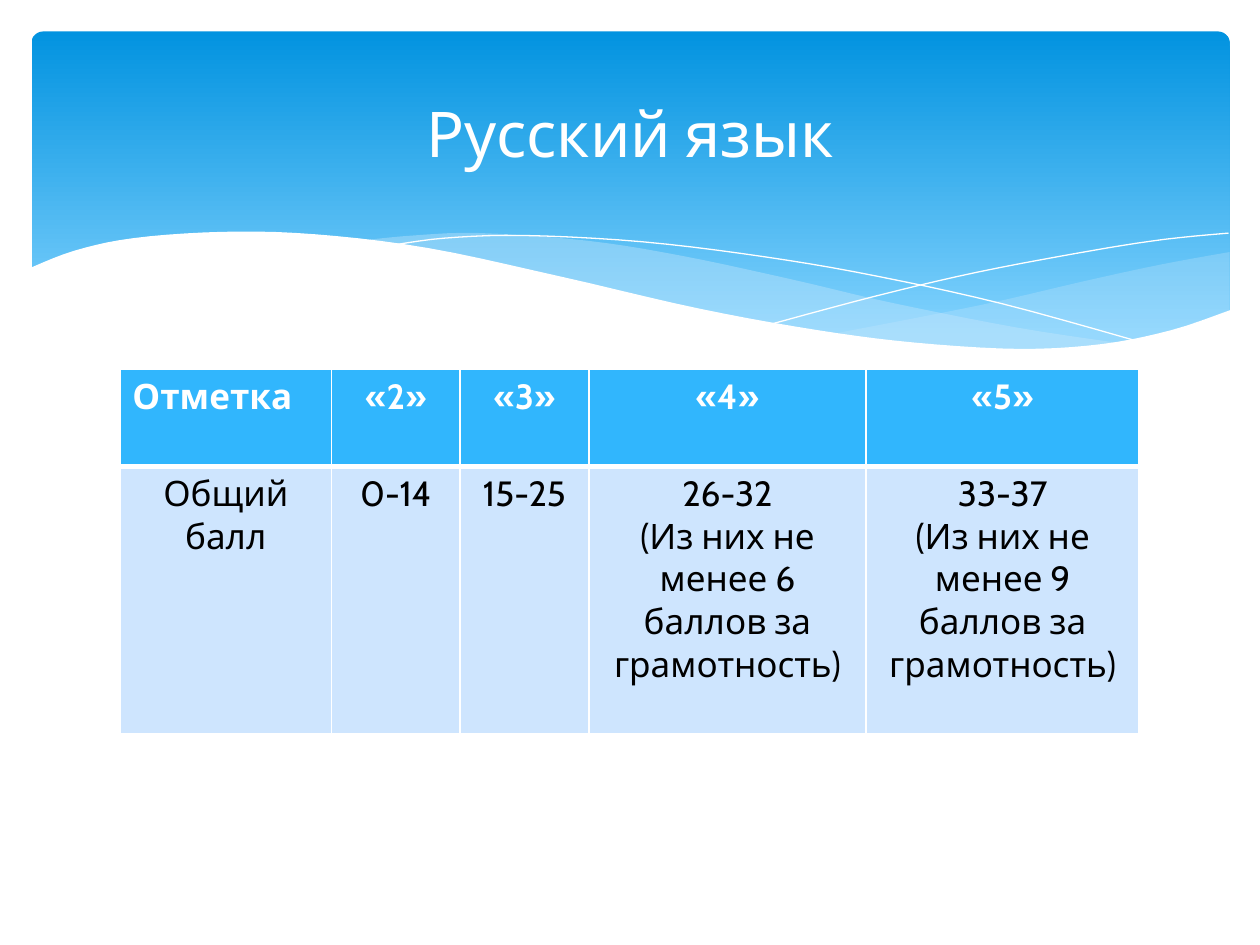
from lxml import etree
from pptx import Presentation
from pptx.dml.color import RGBColor
from pptx.enum import shapes, text
from pptx.oxml import ns
from pptx.util import Pt

WHITE = RGBColor(0xFF, 0xFF, 0xFF)
BLACK = RGBColor(0x00, 0x00, 0x00)
BANNER_TOP = RGBColor(0x02, 0x93, 0xE0)
BANNER_BOTTOM = RGBColor(0x83, 0xD3, 0xFE)
RIBBON = RGBColor(0xC6, 0xE7, 0xFC)
HEADER = RGBColor(0x31, 0xB6, 0xFD)
BODY = RGBColor(0xCE, 0xE5, 0xFE)
FONT = "Cabin"

# Curve knots, in points from the banner's top left corner
WAVE = [(-1.4, 135.4), (24.5, 125.3), (58.3, 118.1), (109.4, 114.5), (162, 115.9),
        (226.8, 123.8), (303.8, 140.4), (381.6, 158.4), (448.6, 170.6),
        (504.7, 177.8), (564.5, 181.4), (612, 178.6), (651.6, 170.6), (685.4, 159.1)]
WAVE_FLOOR = [(685.4, 218.9), (-1.4, 218.9)]
RIGHT_RIBBON_TOP = [(684.7, 126), (645.1, 133.2), (601.9, 142.6), (542.9, 156.2),
                    (457.9, 172.8)]
RIGHT_RIBBON_BOTTOM = [(457.9, 172.8), (489.6, 177.1), (527, 180.7), (568.1, 182.2),
                       (603.4, 180), (639.4, 174.2), (684.7, 159.8)]
LEFT_RIBBON_TOP = [(625, 178.6), (563, 169.2), (490.3, 154.8), (434.9, 141.8),
                   (371.5, 128.2), (316.8, 119.5), (255.6, 115.2), (218.2, 116.6),
                   (187.9, 119.5)]
LEFT_RIBBON_BOTTOM = [(187.9, 119.5), (242.6, 128.2), (305.3, 141.8), (363.6, 154.8),
                      (427, 167.8), (482.4, 176.4), (529.9, 181.4), (571, 182.2),
                      (625, 178.6)]
FALLING_LINE = [(204.5, 122.4), (236.2, 118.1), (281.5, 116.6), (349.2, 120.2),
                (419.8, 128.9), (482.4, 139.7), (554.4, 155.5), (635, 177.8)]
RISING_LINE = [(423.4, 167), (482.4, 151.2), (540.7, 137.5), (605.5, 125.3),
               (647.3, 118.8), (684, 115.2)]

GRADES = [["Отметка", "«2»", "«3»", "«4»", "«5»"],
          ["Общий балл", "0-14", "15-25",
           "26-32\n(Из них не менее 6 баллов за грамотность)",
           "33-37\n(Из них не менее 9 баллов за грамотность)"]]
COLUMN_WIDTHS = [121, 73.5, 73.5, 158.5, 156]
ROW_HEIGHTS = [55.5, 153]


def smooth(knots, steps=5):
    """Return points on a Catmull-Rom curve through the knots."""
    padded = [knots[0], *knots, knots[-1]]
    points = [knots[0]]
    for a, b, c, d in zip(padded, padded[1:], padded[2:], padded[3:]):
        for step in range(1, steps + 1):
            t = step / steps
            points.append(tuple(
                (2 * q + (r - p) * t + (2 * p - 5 * q + 4 * r - s) * t ** 2
                 + (3 * q - p - 3 * r + s) * t ** 3) / 2
                for p, q, r, s in zip(a, b, c, d)))
    return points


def write(frame, wording, size=20, color=BLACK, bold=False,
          align=text.PP_ALIGN.CENTER):
    frame.text = wording
    frame.word_wrap = True
    for paragraph in frame.paragraphs:
        paragraph.alignment = align
        font = paragraph.runs[0].font
        font.name, font.size, font.bold = FONT, Pt(size), bold
        font.color.rgb = color


def add_curve(slide, left, top, points, fill=None, opacity=100):
    """Draw a filled outline, or a white hairline when there is no fill."""
    places = [(Pt(left + x), Pt(top + y)) for x, y in points]
    builder = slide.shapes.build_freeform(*places[0], scale=1.0)
    builder.add_line_segments(places[1:], close=fill is not None)
    curve = builder.convert_to_shape()
    curve.shadow.inherit = False
    if fill is None:
        curve.fill.background()
        curve.line.color.rgb = WHITE
        curve.line.width = Pt(0)
        return
    curve.fill.solid()
    curve.fill.fore_color.rgb = fill
    curve.line.fill.background()
    if opacity < 100:
        tint = curve.fill._xPr.find(".//" + ns.qn("a:srgbClr"))
        etree.SubElement(tint, ns.qn("a:alpha"), val=str(opacity * 1000))


def add_banner(slide, left, top, width, height):
    panel = slide.shapes.add_shape(shapes.MSO_SHAPE.ROUNDED_RECTANGLE,
                                   Pt(left), Pt(top), Pt(width), Pt(height))
    panel.adjustments[0] = 0.034
    panel.shadow.inherit = False
    panel.line.fill.background()
    panel.fill.gradient()
    panel.fill.gradient_angle = 270
    stops = panel.fill.gradient_stops
    for stop, position, color in zip(stops, (0, 0.9), (BANNER_TOP, BANNER_BOTTOM)):
        stop.position = position
        stop.color.rgb = color

    add_curve(slide, left, top,
              smooth(RIGHT_RIBBON_TOP) + smooth(RIGHT_RIBBON_BOTTOM), RIBBON, 29)
    add_curve(slide, left, top,
              smooth(LEFT_RIBBON_TOP) + smooth(LEFT_RIBBON_BOTTOM), RIBBON, 40)
    for line in (FALLING_LINE, RISING_LINE):
        add_curve(slide, left, top, smooth(line))
    add_curve(slide, left, top, smooth(WAVE) + WAVE_FLOOR, WHITE)


def place_title(slide, left, top, width, height):
    title = slide.shapes.title
    title.left, title.top, title.width, title.height = map(
        Pt, (left, top, width, height))
    title.text_frame.vertical_anchor = text.MSO_ANCHOR.MIDDLE
    write(title.text_frame, "Русский язык", size=36, color=WHITE)
    slide.shapes._spTree.append(title._element)  # in front of the banner


def set_borders(cell, bottom):
    properties = cell._tc.get_or_add_tcPr()
    widths = {"a:lnL": 1, "a:lnR": 1, "a:lnT": 1, "a:lnB": bottom}
    for index, (side, width) in enumerate(widths.items()):
        border = etree.Element(ns.qn(side), w=str(Pt(width)))
        solid = etree.SubElement(border, ns.qn("a:solidFill"))
        etree.SubElement(solid, ns.qn("a:srgbClr"), val=str(WHITE))
        properties.insert(index, border)


def add_grades(slide, left, top):
    grades = slide.shapes.add_table(
        len(GRADES), len(COLUMN_WIDTHS), Pt(left), Pt(top),
        Pt(sum(COLUMN_WIDTHS)), Pt(sum(ROW_HEIGHTS))).table
    for column, width in zip(grades.columns, COLUMN_WIDTHS):
        column.width = Pt(width)
    for r, (row, height) in enumerate(zip(grades.rows, ROW_HEIGHTS)):
        row.height = Pt(height)
        header = r == 0
        for c, wording in enumerate(GRADES[r]):
            cell = grades.cell(r, c)
            cell.fill.solid()
            cell.fill.fore_color.rgb = HEADER if header else BODY
            set_borders(cell, bottom=3 if header else 1)
            corner = header and c == 0
            write(cell.text_frame, wording, bold=header,
                  color=WHITE if header else BLACK,
                  align=text.PP_ALIGN.LEFT if corner else text.PP_ALIGN.CENTER)


def main():
    deck = Presentation()
    deck.slide_width, deck.slide_height = Pt(720), Pt(540)
    slide = deck.slides.add_slide(deck.slide_layouts[5])
    slide.background.fill.solid()
    slide.background.fill.fore_color.rgb = WHITE
    add_banner(slide, 18, 18, 684.7, 194.4)
    add_grades(slide, 68.5, 211)
    place_title(slide, 36, 26.6, 648, 98.6)
    deck.save("out.pptx")


if __name__ == "__main__":
    main()
